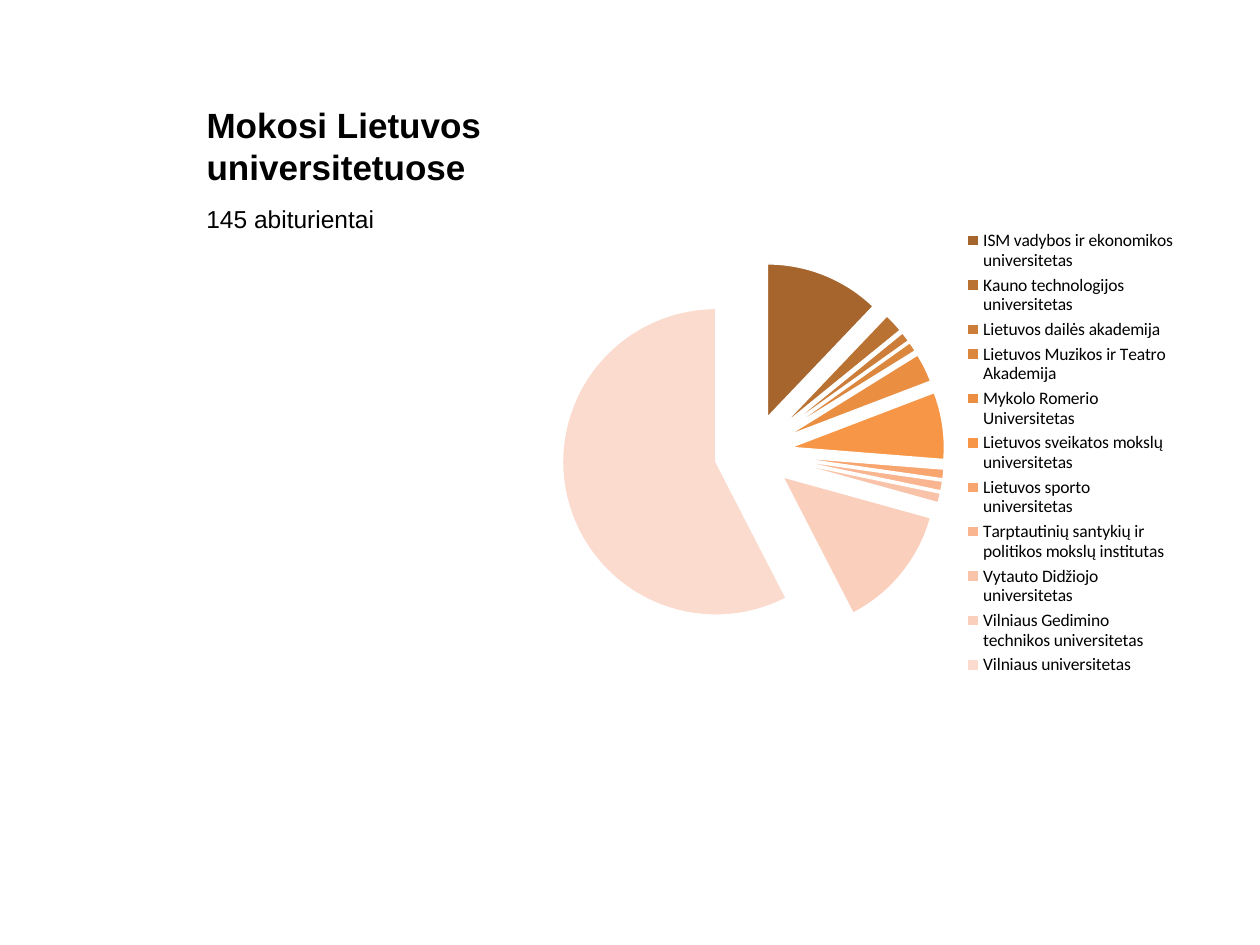
"""Build a slide with an exploded pie chart of university choices."""
from dataclasses import dataclass

from lxml import etree
from pptx import Presentation
from pptx.chart.data import CategoryChartData
from pptx.dml.color import RGBColor
from pptx.enum.chart import XL_CHART_TYPE, XL_LEGEND_POSITION
from pptx.enum.text import MSO_ANCHOR, PP_ALIGN
from pptx.oxml.ns import qn
from pptx.util import Cm, Pt

PIE = XL_CHART_TYPE.PIE_EXPLODED
RIGHT = XL_LEGEND_POSITION.RIGHT
BOTTOM = MSO_ANCHOR.BOTTOM
LEFT = PP_ALIGN.LEFT
EXPLOSION = 25
COLOURS = {"text": "000000", "edge": "FFFFFF"}


@dataclass
class Slice:
    """One university with its share and colour."""

    name: str
    value: int
    colour: str


SLICES = [
    Slice("ISM vadybos ir ekonomikos universitetas", 12, "A5652D"),
    Slice("Kauno technologijos universitetas", 2, "BA7233"),
    Slice("Lietuvos dailės akademija", 1, "CB7D39"),
    Slice("Lietuvos Muzikos ir Teatro Akademija", 1, "DC873E"),
    Slice("Mykolo Romerio Universitetas", 3, "EA8F42"),
    Slice("Lietuvos sveikatos mokslų universitetas", 7, "F79646"),
    Slice("Lietuvos sporto universitetas", 1, "F8A56F"),
    Slice("Tarptautinių santykių ir politikos mokslų institutas", 1, "F9B590"),
    Slice("Vytauto Didžiojo universitetas", 1, "F9C3A9"),
    Slice("Vilniaus Gedimino technikos universitetas", 13, "FACFBC"),
    Slice("Vilniaus universitetas", 57, "FBDBCD"),
]


def place(shape, left: float, top: float, width: float, height: float) -> None:
    """Set the position and size of a shape in centimetres."""
    shape.left, shape.top = Cm(left), Cm(top)
    shape.width, shape.height = Cm(width), Cm(height)


def style_font(font, size: int, name: str, bold: bool = False) -> None:
    """Apply the text colour, size and typeface."""
    font.size, font.name, font.bold = Pt(size), name, bold
    font.color.rgb = RGBColor.from_string(COLOURS["text"])


def write(box, text: str, size: int, bold: bool = False) -> None:
    """Fill a box with one left-aligned paragraph."""
    box.text_frame.text = text
    box.text_frame.word_wrap = True
    para = box.text_frame.paragraphs[0]
    para.alignment = LEFT
    style_font(para.font, size, "Arial", bold)


def add_pie(page, slices: list[Slice]) -> None:
    """Add the exploded pie with its legend."""
    data = CategoryChartData()
    data.categories = [item.name for item in slices]
    data.add_series("Series 1", [item.value for item in slices])
    frame = page.shapes.add_chart(PIE, Cm(10.97), Cm(3.81), Cm(13), Cm(10.64), data)
    chart = frame.chart
    chart.has_title = False
    chart.has_legend = True
    chart.legend.position = RIGHT
    chart.legend.include_in_layout = False
    style_font(chart.font, 10, "Calibri")
    plot = chart.plots[0]
    plot.vary_by_categories = True
    series = plot.series[0]
    for index, item in enumerate(slices):
        look = series.points[index].format
        look.fill.solid()
        look.fill.fore_color.rgb = RGBColor.from_string(item.colour)
        look.line.color.rgb = RGBColor.from_string(COLOURS["edge"])
        look.line.width = Pt(0.75)
    element = series._element
    for old in element.findall(qn("c:explosion")):
        element.remove(old)
    explosion = etree.Element(qn("c:explosion"), val=str(EXPLOSION))
    element.find(qn("c:dPt")).addprevious(explosion)


def main() -> None:
    """Create and save the deck."""
    deck = Presentation()
    deck.slide_width, deck.slide_height = Cm(25.4), Cm(19.05)
    page = deck.slides.add_slide(deck.slide_layouts[5])
    title = page.shapes.title
    place(title, 3.91, 0.76, 9.2, 3.15)
    title.text_frame.vertical_anchor = BOTTOM
    write(title, "Mokosi Lietuvos universitetuose", 20, True)
    add_pie(page, SLICES)
    body = page.shapes.add_textbox(Cm(3.91), Cm(3.99), Cm(9.2), Cm(12.75))
    write(body, "145 abiturientai", 14)
    deck.save("out.pptx")


if __name__ == "__main__":
    main()
